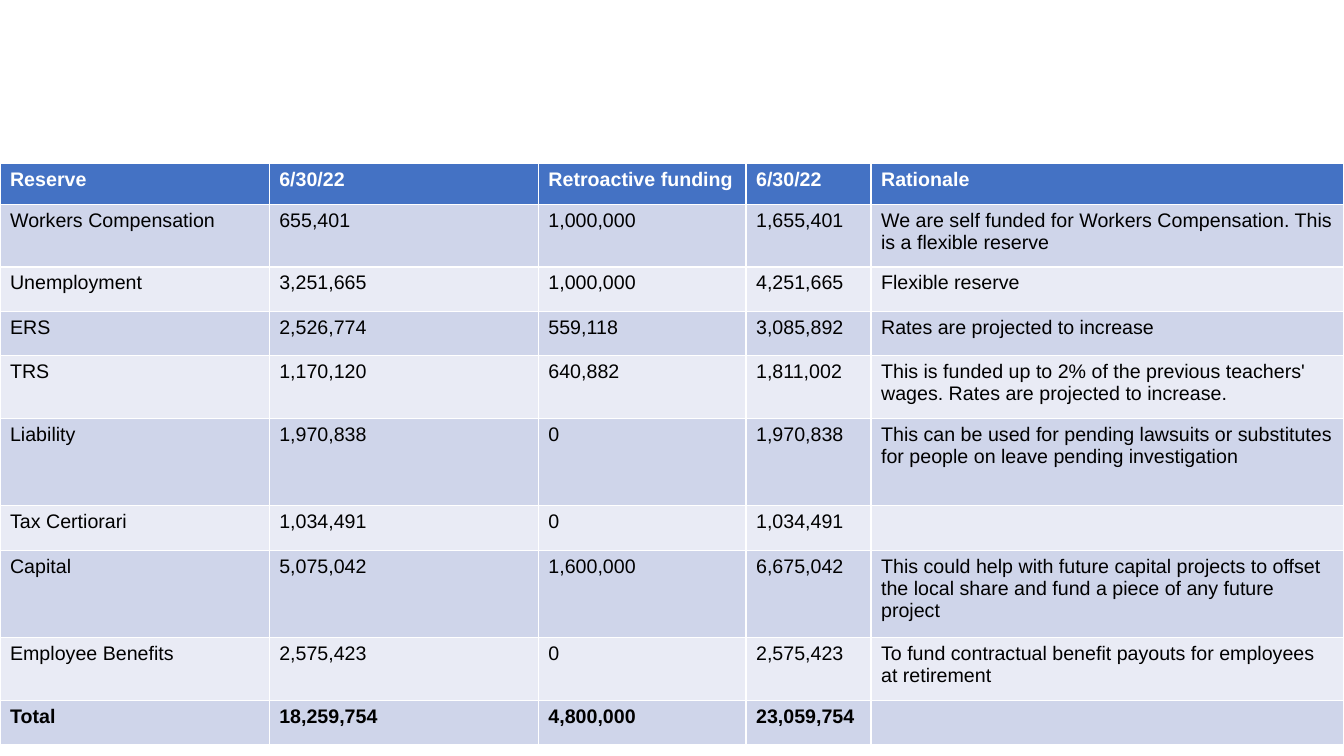
from pptx import Presentation
from pptx.dml.color import RGBColor
from pptx.util import Inches, Pt

BLANK = 6
HEAD, DARK, LIGHT = "4472C4", "CFD5EA", "E9EBF5"
COLS = [2.67, 2.67, 2.06, 1.24, 4.69]
ONE, TWO, THREE = 0.44, 0.62, 0.87  # row heights by lines of text

ROWS = [
    (0.41, "Reserve", "6/30/22", "Retroactive funding", "6/30/22", "Rationale"),
    (TWO, "Workers Compensation", "655,401", "1,000,000", "1,655,401",
     "We are self funded for Workers Compensation. This is a flexible reserve"),
    (ONE, "Unemployment", "3,251,665", "1,000,000", "4,251,665", "Flexible reserve"),
    (ONE, "ERS", "2,526,774", "559,118", "3,085,892",
     "Rates are projected to increase"),
    (TWO, "TRS", "1,170,120", "640,882", "1,811,002",
     "This is funded up to 2% of the previous teachers' wages. "
     "Rates are projected to increase."),
    (THREE, "Liability", "1,970,838", "0", "1,970,838",
     "This can be used for pending lawsuits or substitutes "
     "for people on leave pending investigation"),
    (ONE, "Tax Certiorari", "1,034,491", "0", "1,034,491", ""),
    (THREE, "Capital", "5,075,042", "1,600,000", "6,675,042",
     "This could help with future capital projects to offset "
     "the local share and fund a piece of any future project"),
    (TWO, "Employee Benefits", "2,575,423", "0", "2,575,423",
     "To fund contractual benefit payouts for employees at retirement"),
    (ONE, "Total", "18,259,754", "4,800,000", "23,059,754", ""),
]


def color(code):
    return RGBColor.from_string(code)


deck = Presentation()
deck.slide_width, deck.slide_height = Inches(13.33), Inches(7.5)
slide = deck.slides.add_slide(deck.slide_layouts[BLANK])

height = sum(row[0] for row in ROWS)
table = slide.shapes.add_table(
    len(ROWS), len(COLS), 0, Inches(1.62), deck.slide_width, Inches(height)
).table
for col, width in zip(table.columns, COLS):
    col.width = Inches(width)

for r, (tall, *texts) in enumerate(ROWS):
    table.rows[r].height = Inches(tall)
    top = r == 0
    total = r == len(ROWS) - 1
    band = HEAD if top else DARK if r % 2 else LIGHT
    for c, text in enumerate(texts):
        cell = table.cell(r, c)
        cell.fill.solid()
        cell.fill.fore_color.rgb = color(band)
        cell.text_frame.text = text
        for run in cell.text_frame.paragraphs[0].runs:
            run.font.name = "Arial"
            run.font.size = Pt(14)
            run.font.bold = top or total
            run.font.color.rgb = color("FFFFFF" if top else "000000")

deck.save("out.pptx")
